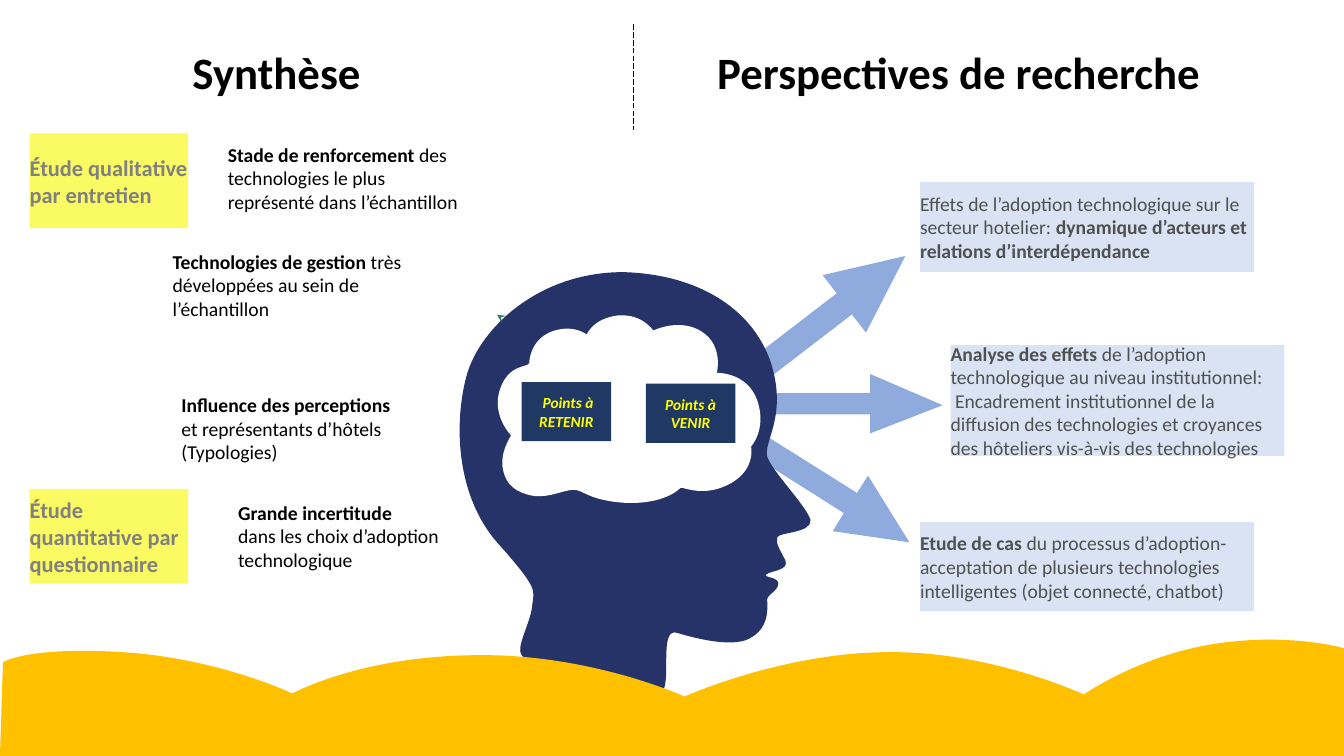
from lxml import etree
from pptx import Presentation
from pptx.dml.color import RGBColor
from pptx.enum import dml, shapes, text
from pptx.oxml.ns import qn
from pptx.util import Cm, Pt

NAVY, SKY, PALE, YELLOW = "263368", "8FAADC", "DAE3F3", "FAFA62"


def paint(fill, colour):
    fill.solid()
    fill.fore_color.rgb = RGBColor.from_string(colour)


def write(content, left, top, width, height, fill=None, size=14, colour="000000",
          italic=False, align=text.PP_ALIGN.LEFT, spacing=1.0, tabs=()):
    """Add a box of text; ** switches bold on and off, a newline starts a paragraph."""
    place = Cm(left), Cm(top), Cm(width), Cm(height)
    if fill:
        box = page.shapes.add_shape(shapes.MSO_SHAPE.RECTANGLE, *place)
        box.shadow.inherit = False
        box.line.fill.background()
        paint(box.fill, fill)
    else:
        box = page.shapes.add_textbox(*place)
    frame = box.text_frame
    frame.word_wrap = True
    frame.vertical_anchor = text.MSO_ANCHOR.MIDDLE
    frame.margin_left = frame.margin_right = frame.margin_top = frame.margin_bottom = 0
    for number, line in enumerate(content.split("\n")):
        para = frame.add_paragraph() if number else frame.paragraphs[0]
        para.alignment = align
        para.line_spacing = spacing
        if tabs:
            stops = etree.SubElement(para._p.get_or_add_pPr(), qn("a:tabLst"))
            for stop in tabs:
                etree.SubElement(stops, qn("a:tab"), pos=str(Cm(stop)), algn="l")
        for position, words in enumerate(line.split("**")):
            if words:
                span = para.add_run()
                span.text = words
                font = span.font
                font.name, font.size = "Calibri", Pt(size)
                font.bold, font.italic = position % 2 == 1, italic
                paint(font.fill, colour)


deck = Presentation()
deck.slide_width, deck.slide_height = Cm(33.86), Cm(19.05)
page = deck.slides.add_slide(deck.slide_layouts[6])

write("**\tSynthèse\tPerspectives de recherche**", 0, 0.56, 33.86, 2.67, size=32,
      spacing=0.9, tabs=(4.85, 18.07))

# Outlines in hundredths of an inch: two numbers draw a line, six a Bézier curve
lower_arrow = [(837, 509), (690, 416), (702, 396), (850, 489), (861, 472),
               (902, 538), (826, 527)]
middle_arrow = [(863, 411), (685, 411), (685, 390), (863, 390), (863, 371),
                (935, 402), (863, 430)]
upper_arrow = [(830, 291), (678, 408), (694, 428), (845, 312), (859, 330),
               (898, 254), (816, 273)]
head = [
    (463, 372), (450, 419, 452, 491, 493, 538), (534, 584, 530, 585, 528, 600),
    (527, 615, 515, 636, 516, 646), (517, 657, 553, 677, 572, 683),
    (592, 689, 655, 698, 659, 682), (664, 666, 655, 622, 672, 628),
    (689, 633, 729, 644, 746, 632), (764, 621, 761, 601, 761, 595),
    (761, 590, 772, 586, 772, 579), (772, 572, 756, 573, 760, 570),
    (765, 566, 783, 566, 779, 556), (774, 546, 769, 539, 771, 533),
    (773, 528, 805, 529, 804, 516), (800, 502, 766, 468, 761, 453),
    (757, 438, 782, 412, 764, 358), (745, 305, 691, 272, 618, 270),
    (534, 270, 476, 326, 463, 372)]
brain = [
    (525, 360), (525, 360, 525, 338, 547, 329), (569, 321, 582, 332, 582, 332),
    (582, 332, 588, 316, 613, 313), (637, 311, 648, 328, 648, 328),
    (648, 328, 674, 315, 696, 329), (718, 343, 711, 370, 711, 370),
    (711, 370, 741, 369, 751, 397), (761, 426, 745, 443, 745, 443),
    (745, 443, 750, 466, 724, 480), (698, 494, 678, 483, 675, 484),
    (673, 486, 659, 500, 622, 499), (584, 497, 579, 486, 569, 486),
    (559, 486, 546, 494, 529, 492), (513, 489, 502, 482, 499, 466),
    (495, 450, 507, 432, 507, 432), (507, 432, 487, 412, 496, 386),
    (505, 360, 525, 365, 525, 360)]
waves = [
    (3, 657), (3, 657, 27, 641, 122, 647), (217, 653, 290, 688, 290, 688),
    (290, 688, 357, 651, 471, 650), (585, 648, 679, 691, 679, 691),
    (679, 691, 775, 648, 878, 647), (981, 645, 1075, 689, 1075, 689),
    (1075, 689, 1129, 651, 1203, 639), (1278, 627, 1333, 643, 1333, 643),
    (1333, 750), (0, 750)]

for outline, colour in [(lower_arrow, SKY), (middle_arrow, SKY), (upper_arrow, SKY),
                        (head, NAVY), (brain, "FFFFFF"), (waves, "FFC000")]:
    anchors = [segment[-2:] for segment in outline]
    builder = page.shapes.build_freeform(*anchors[0], scale=Cm(2.54) / 100)
    builder.add_line_segments(anchors[1:], close=True)
    form = builder.convert_to_shape()
    form.shadow.inherit = False
    form.line.fill.background()
    paint(form.fill, colour)
    # Turn each curved segment into a Bézier by putting its two handles before its end
    origin_x, origin_y = map(min, zip(*anchors))
    edges = list(form._element.iter(qn("a:lnTo")))
    for edge, segment in zip(edges, outline[1:]):
        if len(segment) == 6:
            edge.tag = qn("a:cubicBezTo")
            for index in (0, 1):
                x, y = segment[2 * index:2 * index + 2]
                handle = etree.Element(qn("a:pt"), x=str(x - origin_x), y=str(y - origin_y))
                edge.insert(index, handle)

# Divider between the headings, and the small arrowhead beside the head
for ends, colour, weight, dashed in [((15.96, 0.61, 15.96, 3.28), "000000", 0.5, True),
                                     ((12.55, 7.95, 12.52, 7.93), "2E826D", 0.6, False)]:
    line = page.shapes.add_connector(shapes.MSO_CONNECTOR.STRAIGHT, *map(Cm, ends))
    paint(line.line.fill, colour)
    line.line.width = Pt(weight)
    if dashed:
        line.line.dash_style = dml.MSO_LINE.LONG_DASH
    else:
        etree.SubElement(line.line._get_or_add_ln(), qn("a:tailEnd"), type="stealth")
    etree.SubElement(line._element.spPr, qn("a:effectLst"))

for study, top in [("**Étude qualitative**\n**par entretien**", 3.36),
                   ("**Étude quantitative par questionnaire**", 12.32)]:
    write(study, 0.75, top, 3.99, 2.39, fill=YELLOW, size=16, colour="808080")

for finding, *place in [
        ("**Stade de renforcement** des technologies le plus représenté dans l’échantillon",
         5.74, 3.5, 5.84, 1.96),
        ("**Technologies de gestion** très développées au sein de l’échantillon",
         4.35, 6.14, 5.97, 2.08),
        ("**Influence des perceptions **et représentants d’hôtels (Typologies)",
         4.57, 9.76, 5.33, 2.06),
        ("**Grande incertitude**\ndans les choix d’adoption technologique",
         6, 12.47, 5.18, 2.08)]:
    write(finding, *place)

for prospect, left, top, height in [
        ("Effets de l’adoption technologique sur le secteur hotelier: "
         "**dynamique d’acteurs et relations d’interdépendance**", 23.18, 4.59, 2.26),
        ("**Analyse des effets** de l’adoption technologique au niveau institutionnel:\n"
         " Encadrement institutionnel de la diffusion des technologies et croyances "
         "des hôteliers vis-à-vis des technologies", 23.95, 8.7, 2.79),
        ("**Etude de cas** du processus d’adoption-acceptation de plusieurs technologies "
         "intelligentes (objet connecté, chatbot)", 23.18, 13.16, 2.24)]:
    write(prospect, left, top, 8.41, height, fill=PALE, colour="4F5151")

for label, left, top in [("** Points à RETENIR**", 13.14, 9.63),
                         ("**Points à VENIR**", 16.27, 9.67)]:
    write(label, left, top, 2.26, 1.49, fill="203864", size=11, colour="FFFF00",
          italic=True, align=text.PP_ALIGN.CENTER)

deck.save("out.pptx")
